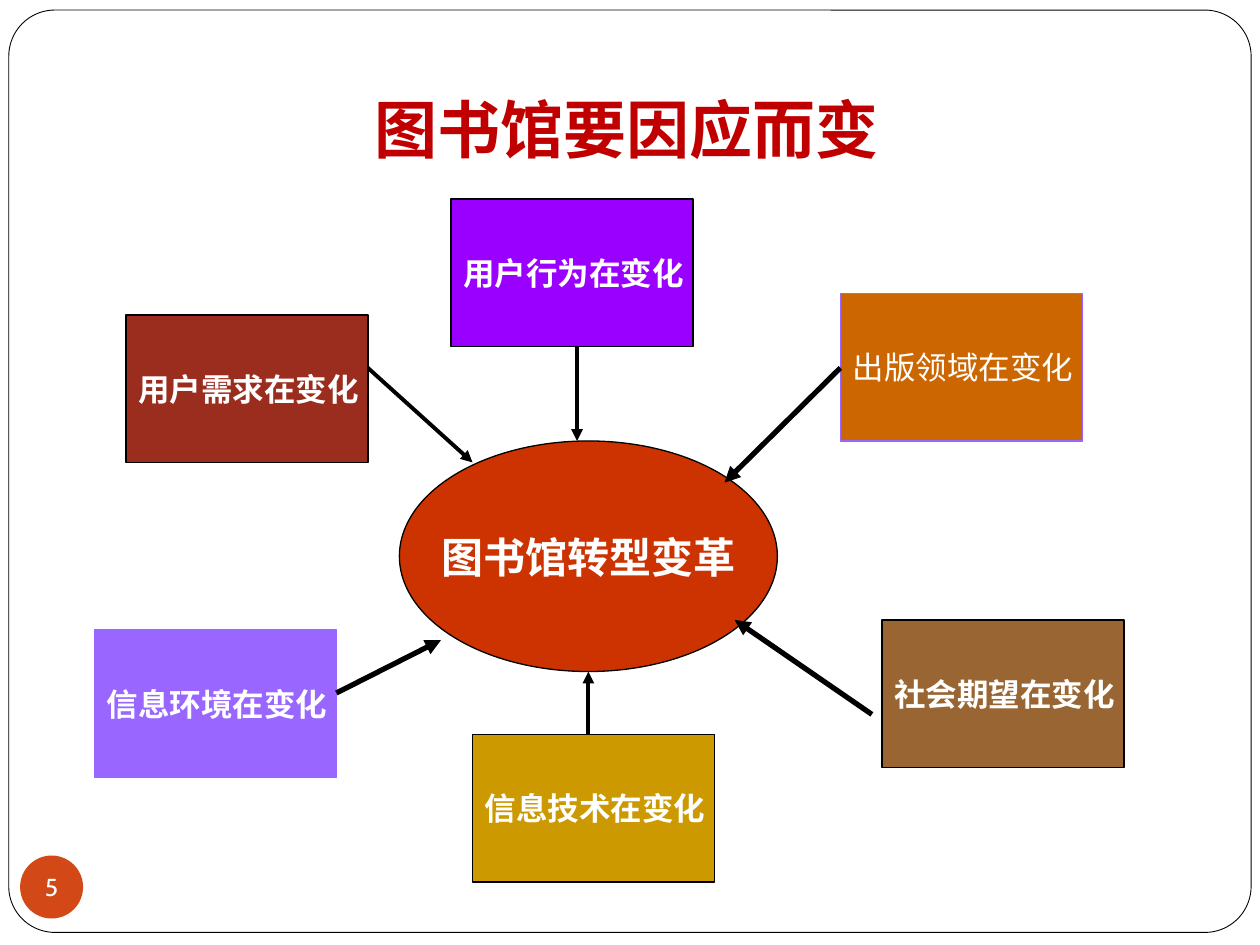
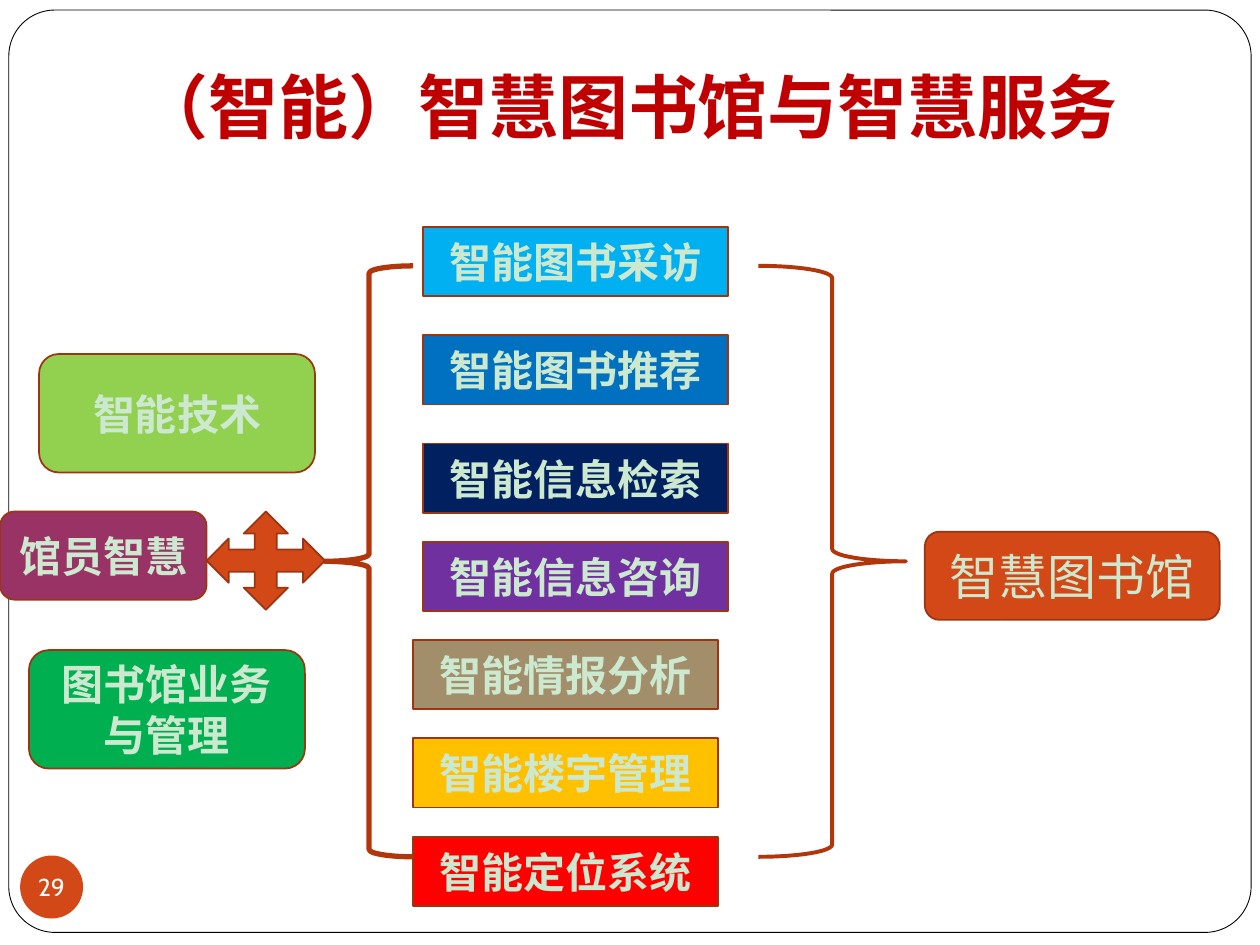
"""Build two slides on how libraries change and become smart."""
from lxml.etree import SubElement
from pptx import Presentation
from pptx.dml.color import RGBColor
from pptx.enum.shapes import MSO_CONNECTOR, MSO_SHAPE
from pptx.enum.text import MSO_ANCHOR, PP_ALIGN
from pptx.oxml.ns import qn
from pptx.util import Inches, Pt

WHITE = RGBColor(0xFF, 0xFF, 0xFF)
BLACK = RGBColor(0, 0, 0)
PALE = RGBColor(0xCC, 0xE8, 0xCF)
RED = RGBColor(0xC0, 0, 0)
ORANGE = RGBColor(0xD3, 0x48, 0x17)
RUST = RGBColor(0x9C, 0x35, 0x11)
BRICK = RGBColor(0xB1, 0x36, 0x0B)
LILAC = RGBColor(0x99, 0x66, 0xFF)
CORE = RGBColor(0xCC, 0x33, 0)
GOLD = RGBColor(0xCC, 0x99, 0)
MAROON = RGBColor(0x9B, 0x2D, 0x1F)
BROWN = RGBColor(0x99, 0x66, 0x33)
VIOLET = RGBColor(0x99, 0, 0xFF)
AMBER = RGBColor(0xCC, 0x66, 0)
SKY = RGBColor(0, 0xB0, 0xF0)
BLUE = RGBColor(0, 0x70, 0xC0)
NAVY = RGBColor(0, 0x20, 0x60)
PURPLE = RGBColor(0x70, 0x30, 0xA0)
TAN = RGBColor(0xA2, 0x8E, 0x6A)
YELLOW = RGBColor(0xFF, 0xC0, 0)
SCARLET = RGBColor(0xFF, 0, 0)
LIME = RGBColor(0x92, 0xD0, 0x50)
GREEN = RGBColor(0, 0xB0, 0x50)
PLUM = RGBColor(0x99, 0x33, 0x66)


def draw(slide, kind, place, fill=None, line=None, width=1):
    shape = slide.shapes.add_shape(kind, *map(Inches, place))
    shape.shadow.inherit = False
    if fill is None:
        shape.fill.background()
    else:
        shape.fill.solid()
        shape.fill.fore_color.rgb = fill
    if line is None:
        shape.line.fill.background()
    else:
        shape.line.color.rgb = line
        shape.line.width = Pt(width)
    return shape


def write(shape, text, size, face, color, bold=True, wrap=True,
          align=PP_ALIGN.CENTER, anchor=MSO_ANCHOR.MIDDLE):
    frame = shape.text_frame
    frame.word_wrap = wrap
    frame.vertical_anchor = anchor
    par = frame.paragraphs[0]
    par.text = text
    par.alignment = align
    font = par.font
    font.size, font.name, font.bold = Pt(size), face, bold
    font.color.rgb = color
    return frame


deck = Presentation()
deck.slide_width, deck.slide_height = Inches(10), Inches(7.5)

titles = [
    ("图书馆要因应而变", 36, (0.47, 0.62, 9, 0.8), "5"),
    ("（智能）智慧图书馆与智慧服务", 40, (0.53, 0.16, 8.91, 1.11), "29"),
]
for title, size, place, number in titles:
    slide = deck.slides.add_slide(deck.slide_layouts[6])
    slide.background.fill.solid()
    slide.background.fill.fore_color.rgb = WHITE
    panel = draw(slide, MSO_SHAPE.ROUNDED_RECTANGLE, (0.07, 0.08, 9.86, 7.32),
                 WHITE, BLACK, 0.5)
    panel.adjustments[0] = 0.05
    badge = draw(slide, MSO_SHAPE.OVAL, (0.16, 6.79, 0.5, 0.5), ORANGE)
    frame = write(badge, number, 14, "Cabin", WHITE, False, False)
    frame.margin_left = frame.margin_right = 0
    frame.margin_top = frame.margin_bottom = 0
    head = slide.shapes.add_textbox(*map(Inches, place))
    frame = write(head, title, size, "Cabin", RED, anchor=MSO_ANCHOR.BOTTOM)
    frame.margin_bottom = Inches(0.1)

change, smart = deck.slides

core = draw(change, MSO_SHAPE.OVAL, (3.17, 3.5, 3, 1.83), CORE, BLACK, 0.75)
write(core, "图书馆转型变革", 24, "Arial", WHITE, wrap=False)

drivers = [
    ("信息环境在变化", 0.75, 5, LILAC, LILAC, True),
    ("信息技术在变化", 3.75, 5.83, GOLD, BLACK, True),
    ("用户需求在变化", 1, 2.5, MAROON, BLACK, True),
    ("社会期望在变化", 7, 4.92, BROWN, BLACK, True),
    ("用户行为在变化", 3.58, 1.58, VIOLET, BLACK, True),
    ("出版领域在变化", 6.67, 2.33, AMBER, LILAC, False),
]
for text, left, top, fill, line, bold in drivers:
    box = draw(change, MSO_SHAPE.RECTANGLE, (left, top, 1.92, 1.17),
               fill, line, 0.75)
    write(box, text, 18, "Arial", WHITE, bold, False, PP_ALIGN.LEFT)

arrows = [
    (4.67, 5.83, 4.67, 5.33, 2.25),
    (2.67, 5.5, 3.5, 5.08, 3),
    (2.92, 2.92, 3.75, 3.67, 2.25),
    (6.67, 2.92, 5.75, 3.83, 3),
    (6.92, 5.67, 5.83, 4.92, 3),
    (4.58, 2.75, 4.58, 3.5, 2.25),
]
for *ends, width in arrows:
    arrow = change.shapes.add_connector(MSO_CONNECTOR.STRAIGHT,
                                        *map(Inches, ends))
    arrow.line.color.rgb = BLACK
    arrow.line.width = Pt(width)
    SubElement(arrow.line._get_or_add_ln(), qn("a:tailEnd"), type="triangle")
    SubElement(arrow._element.spPr, qn("a:effectLst"))

systems = [
    ("智能图书采访", SKY),
    ("智能图书推荐", BLUE),
    ("智能信息检索", NAVY),
    ("智能信息咨询", PURPLE),
    ("智能情报分析", TAN),
    ("智能楼宇管理", YELLOW),
    ("智能定位系统", SCARLET),
]
for row, (text, fill) in enumerate(systems):
    left = 3.36 if row < 4 else 3.28
    top = 1.8 + 0.86 * row if row < 3 else 4.3 + 0.78 * (row - 3)
    box = draw(smart, MSO_SHAPE.RECTANGLE, (left, top, 2.42, 0.55), fill, RUST)
    write(box, text, 24, "Times New Roman", PALE)

draw(smart, MSO_SHAPE.LEFT_BRACE, (2.58, 2.11, 0.7, 4.69), None, BRICK, 3)
draw(smart, MSO_SHAPE.RIGHT_BRACE, (6.02, 2.11, 1.17, 4.69), None, BRICK, 2.25)

parts = [
    ("智能技术", (0.31, 2.81, 2.19, 0.94), LIME, 24, True),
    ("图书馆业务与管理", (0.23, 5.16, 2.19, 0.94), GREEN, 24, True),
    ("智慧图书馆", (7.34, 4.22, 2.34, 0.7), ORANGE, 28, False),
    ("馆员智慧", (0, 4.06, 1.64, 0.7), PLUM, 24, True),
]
for text, place, fill, size, bold in parts:
    box = draw(smart, MSO_SHAPE.ROUNDED_RECTANGLE, place, fill, RUST)
    write(box, text, size, "Times New Roman", PALE, bold)

draw(smart, MSO_SHAPE.QUAD_ARROW, (1.64, 4.06, 0.94, 0.78), ORANGE, RUST)

deck.save("out.pptx")
